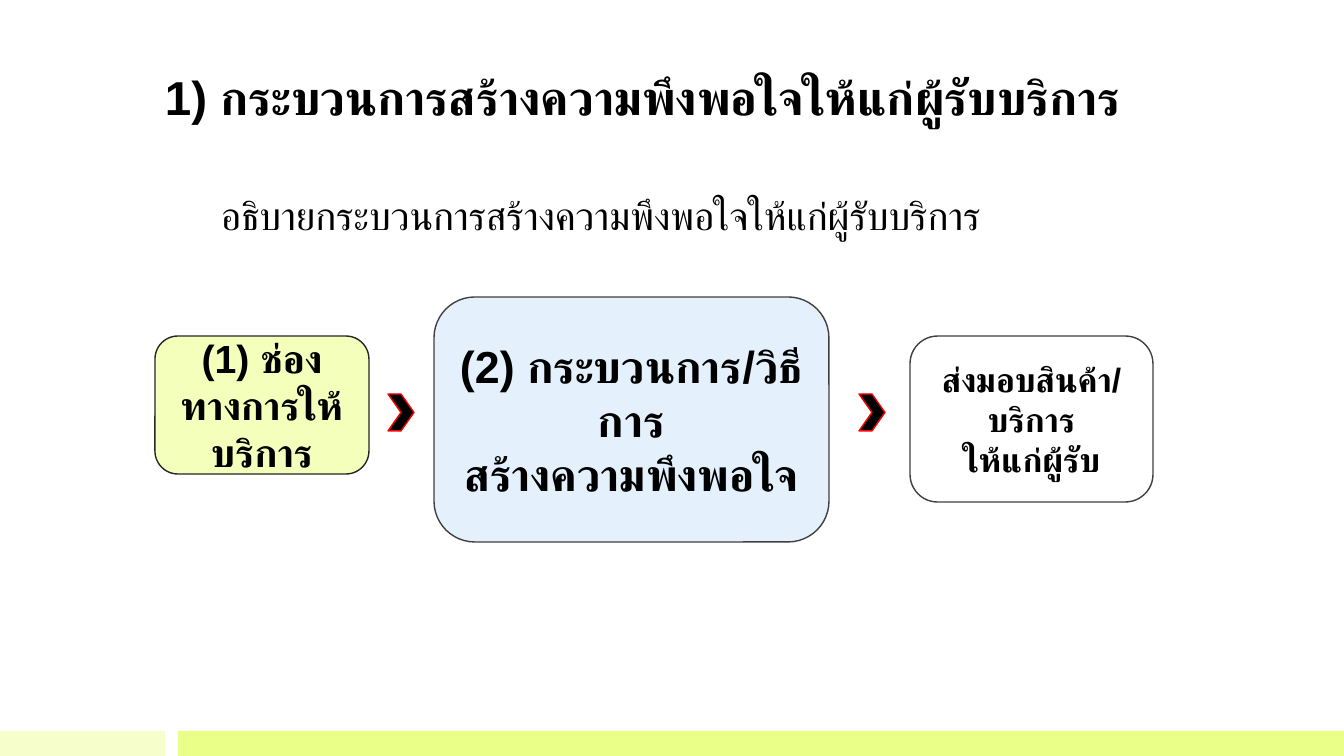
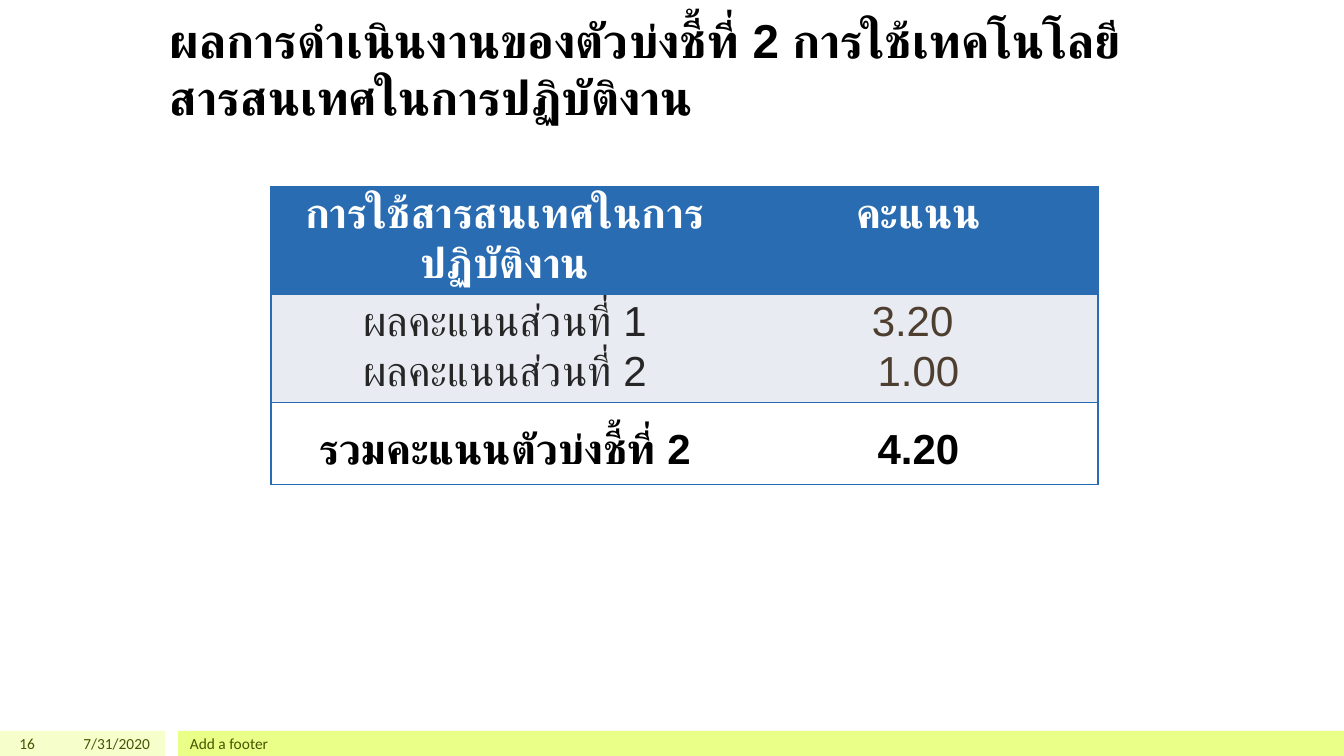
from lxml import etree
from pptx import Presentation
from pptx import util as u
from pptx.dml.color import RGBColor
from pptx.enum import shapes, text
from pptx.oxml import ns

EMU_PER_PX = 914400 / 100.8
COLORS = {
    "black": "000000", "white": "FFFFFF", "red": "FF0000", "ink": "262626",
    "outline": "404040", "pale_band": "F6FFCC", "band": "E9FF88",
    "footer": "455500", "channel": "F3FFBB", "process": "E4F0FC",
    "table_blue": "2A6CB2", "table_pale": "E8EBF2", "score": "4D3E2F",
}
CENTER = text.PP_ALIGN.CENTER
MIDDLE = text.MSO_ANCHOR.MIDDLE


def px(*values):
    """Turn pixel lengths into EMU."""
    return [u.Emu(round(value * EMU_PER_PX)) for value in values]


def rgb(name):
    """Return the named colour."""
    return RGBColor.from_string(COLORS[name])


def write(frame, paragraphs, size, color="black", bold=False, font="Arial",
          align=text.PP_ALIGN.LEFT, anchor=MIDDLE, spacing=None):
    """Fill a text frame or cell frame with paragraphs, breaking lines at newlines."""
    frame.word_wrap = True
    frame.vertical_anchor = anchor
    for index, content in enumerate(paragraphs):
        paragraph = frame.add_paragraph() if index else frame.paragraphs[0]
        paragraph.alignment = align
        if spacing:
            paragraph.line_spacing = spacing
        for number, line in enumerate(content.split("\n")):
            if number:
                paragraph.add_line_break()
            run = paragraph.add_run()
            run.text = line
            run.font.size = u.Pt(size)
            run.font.bold = bold
            run.font.name = font
            run.font.color.rgb = rgb(color)
            complex_font = etree.SubElement(run.font._element, ns.qn("a:cs"))
            complex_font.set("typeface", font)


def add_text(slide, box, content, size, **style):
    """Add a text box holding one paragraph."""
    shape = slide.shapes.add_textbox(*px(*box))
    write(shape.text_frame, [content], size, **style)


def add_box(slide, kind, box, fill, line=None):
    """Add a flat filled shape with an optional outline."""
    shape = slide.shapes.add_shape(kind, *px(*box))
    shape.shadow.inherit = False
    shape.fill.solid()
    shape.fill.fore_color.rgb = rgb(fill)
    if line:
        shape.line.color.rgb = rgb(line)
        shape.line.width = u.Pt(1)
    else:
        shape.line.fill.background()
    return shape


def add_base(presentation, title, left):
    """Add a blank slide with the bottom bands and a title."""
    slide = presentation.slides.add_slide(presentation.slide_layouts[6])
    for x, width, fill in ((0, 165, "pale_band"), (178, 1166, "band")):
        add_box(slide, shapes.MSO_SHAPE.RECTANGLE, (x, 731, width, 25), fill)
    add_text(slide, (left, 0, 1033, 130), title, 34, bold=True,
             anchor=text.MSO_ANCHOR.BOTTOM)
    return slide


def add_footer(slide, number, date, note):
    """Write slide number, date and note over the bottom bands."""
    right, left = text.PP_ALIGN.RIGHT, text.PP_ALIGN.LEFT
    for x, width, content, align in ((0, 45, number, right), (50, 110, date, right),
                                     (180, 1008, note, left)):
        add_text(slide, (x, 731, width, 25), content, 11, color="footer",
                 font="Calibri", align=align)


def add_process(slide, left, top):
    """Draw the three service steps with chevrons between them."""
    steps = (
        ((0, 39, 214, 138), "channel", "ink", 28, "(1) ช่องทางการให้บริการ"),
        ((279, 0, 395, 245), "process", "outline", 32,
         "(2) กระบวนการ/วิธีการ\nสร้างความพึงพอใจ"),
        ((755, 39, 243, 166), "white", "outline", 24, "ส่งมอบสินค้า/บริการ\nให้แก่ผู้รับ"),
    )
    for (x, y, width, height), fill, line, size, label in steps:
        step = add_box(slide, shapes.MSO_SHAPE.ROUNDED_RECTANGLE,
                       (left + x, top + y, width, height), fill, line)
        write(step.text_frame, [label], size, bold=True, align=CENTER)
    for x in (233, 704):
        add_box(slide, shapes.MSO_SHAPE.CHEVRON, (left + x, top + 97, 26, 37),
                "black", "red")


def set_borders(cell, visible):
    """Draw the visible sides of a cell in blue and hide the others."""
    properties = cell._tc.get_or_add_tcPr()
    for index, side in enumerate("LRTB"):
        border = etree.Element(ns.qn("a:ln" + side), w=str(u.Pt(1)))
        if side in visible:
            fill = etree.SubElement(border, ns.qn("a:solidFill"))
            etree.SubElement(fill, ns.qn("a:srgbClr"), val=COLORS["table_blue"])
        else:
            etree.SubElement(border, ns.qn("a:noFill"))
        properties.insert(index, border)


def add_scores(slide, left, top):
    """Build the score table."""
    rows = (
        (91, "table_blue", ("white", "white"), True, 1.07,
         (["การใช้สารสนเทศในการปฏิบัติงาน"], ["คะแนน"])),
        (99, "table_pale", ("ink", "score"), False, 1.07,
         (["ผลคะแนนส่วนที่ 1", "ผลคะแนนส่วนที่ 2"], ["3.20 \n1.00"])),
        (82, "white", ("black", "black"), True, 1.5,
         (["รวมคะแนนตัวบ่งชี้ที่ 2"], ["4.20"])),
    )
    widths = (468, 359)
    box = px(left, top, sum(widths), sum(row[0] for row in rows))
    table = slide.shapes.add_table(len(rows), len(widths), *box).table
    table.first_row = table.horz_banding = False
    for column, width in zip(table.columns, px(*widths)):
        column.width = width
    for r, (height, fill, colors, bold, spacing, contents) in enumerate(rows):
        table.rows[r].height = px(height)[0]
        for c, content in enumerate(contents):
            cell = table.cell(r, c)
            cell.margin_left, cell.margin_right = px(7, 7)
            cell.margin_top = cell.margin_bottom = 0
            cell.fill.solid()
            cell.fill.fore_color.rgb = rgb(fill)
            set_borders(cell, "TB" + "LR"[c])
            write(cell.text_frame, content, 30, colors[c], bold, align=CENTER,
                  anchor=text.MSO_ANCHOR.TOP, spacing=spacing)


def build_process_slide(presentation):
    """Build the service satisfaction slide."""
    slide = add_base(presentation, "1) กระบวนการสร้างความพึงพอใจให้แก่ผู้รับบริการ", 155)
    add_text(slide, (211, 183, 922, 61), "อธิบายกระบวนการสร้างความพึงพอใจให้แก่ผู้รับบริการ",
             28, anchor=text.MSO_ANCHOR.TOP, spacing=1.07)
    add_process(slide, 155, 297)


def build_score_slide(presentation):
    """Build the indicator score slide."""
    slide = add_base(presentation, "ผลการดำเนินงานของตัวบ่งชี้ที่ 2 "
                     "การใช้เทคโนโลยีสารสนเทศในการปฏิบัติงาน", 160)
    add_footer(slide, "16", "7/31/2020", "Add a footer")
    add_scores(slide, 271, 187)


def main():
    """Build and save the presentation."""
    presentation = Presentation()
    presentation.slide_width, presentation.slide_height = px(1344, 756)
    build_process_slide(presentation)
    build_score_slide(presentation)
    presentation.save("out.pptx")


if __name__ == "__main__":
    main()
